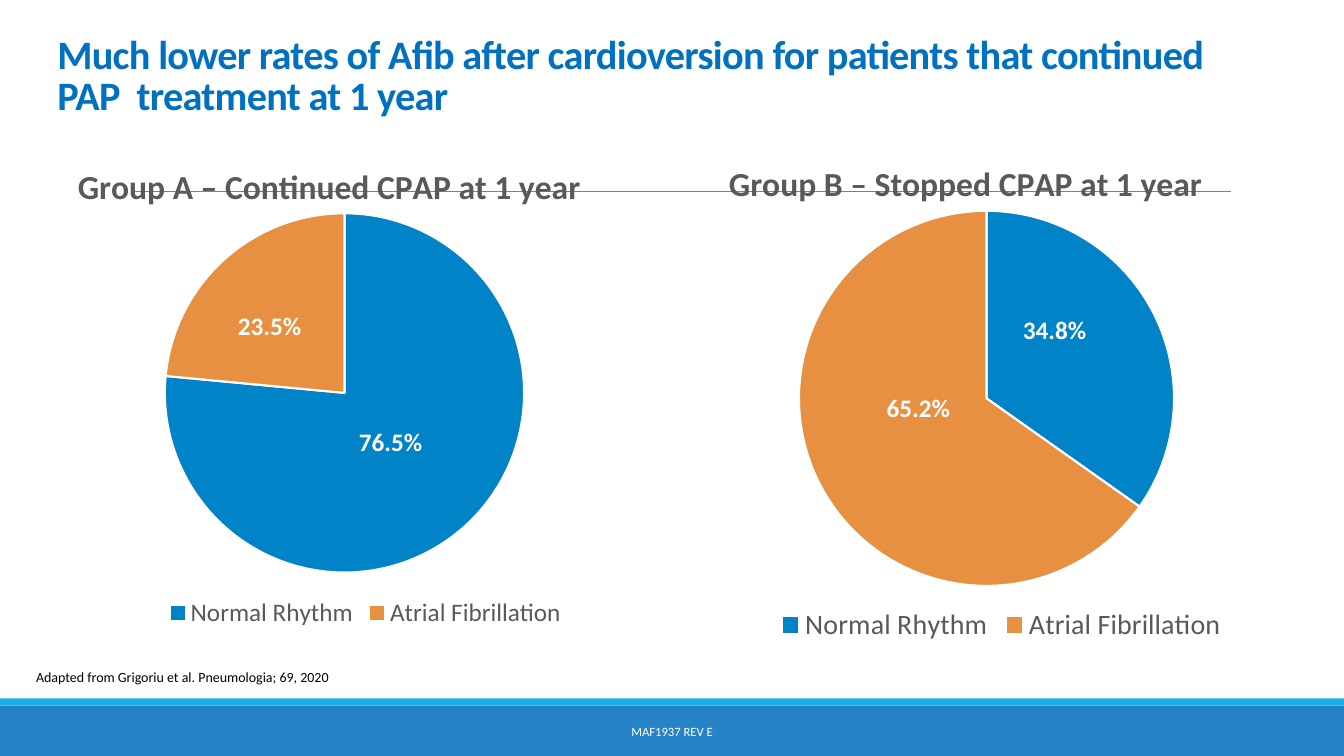
from lxml import etree
from pptx import Presentation
from pptx.chart import data as chart_data
from pptx.dml.color import RGBColor
from pptx.enum import chart as chart_enum, shapes, text
from pptx.oxml import ns
from pptx.util import Cm, Pt

COLORS = {
    "title": "0070C0", "normal": "0083C7", "afib": "E89041", "label": "595959",
    "band": "2683C6", "stripe": "1CADE4", "rule": "808080",
    "white": "FFFFFF", "black": "000000",
}
FONT = "Calibri"
CATEGORIES = ("Normal Rhythm", "Atrial Fibrillation")
GROUPS = (
    {
        "title": "Group A – Continued CPAP at 1 year",
        "values": (76.5, 23.5),
        "box": (-0.28, 3.86, 18.16, 12.12),
        "plot": (0.244, 0.125, 0.499, 0.747),
        "title_at": (0.115, 0.01),
        "legend_at": (0.24, 0.92),
        "legend_size": 18,
        "label_shifts": ((-0.02, -0.035), (-0.02, 0)),
    },
    {
        "title": "Group B – Stopped CPAP at 1 year",
        "values": (34.8, 65.2),
        "box": (15.65, 3.78, 19.15, 12.57),
        "plot": (0.234, 0.122, 0.494, 0.752),
        "title_at": (0.134, 0.01),
        "legend_at": (0.2, 0.92),
        "legend_size": 20,
        "label_shifts": ((-0.02, -0.05), (0.02, -0.065)),
    },
)


def color(name):
    """Return the named colour."""
    return RGBColor.from_string(COLORS[name])


def style_font(font, size, name, bold=False):
    """Format a font with the slide's typeface."""
    font.name, font.size, font.bold = FONT, Pt(size), bold
    font.color.rgb = color(name)


def place(element, index, position, inner=False):
    """Give a chart part a manual layout in fractions of the chart."""
    for old in element.findall(ns.qn("c:layout")):
        element.remove(old)
    layout = etree.Element(ns.qn("c:layout"))
    manual = etree.SubElement(layout, ns.qn("c:manualLayout"))
    settings = []
    if inner:
        settings.append(("layoutTarget", "inner"))
    if element.tag != ns.qn("c:dLbl"):
        settings += [("xMode", "edge"), ("yMode", "edge")]
    settings += zip("xywh", position)
    for tag, value in settings:
        etree.SubElement(manual, ns.qn(f"c:{tag}")).set("val", str(value))
    element.insert(index, layout)


def add_text(page, box, words, size, name, align=text.PP_ALIGN.LEFT):
    """Add a wrapped one-line text box."""
    frame = page.shapes.add_textbox(*map(Cm, box)).text_frame
    frame.word_wrap = True
    frame.vertical_anchor = text.MSO_ANCHOR.MIDDLE
    para = frame.paragraphs[0]
    para.alignment = align
    span = para.add_run()
    span.text = words
    style_font(span.font, size, name)


def add_heading(page, box):
    """Fill the title placeholder and draw the rule below it."""
    title = page.shapes.title
    title.left, title.top, title.width, title.height = map(Cm, box)
    frame = title.text_frame
    frame.word_wrap = True
    frame.auto_size = text.MSO_AUTO_SIZE.NONE
    frame.vertical_anchor = text.MSO_ANCHOR.BOTTOM
    para = frame.paragraphs[0]
    para.alignment = text.PP_ALIGN.LEFT
    para.line_spacing = 0.85
    span = para.add_run()
    span.text = ("Much lower rates of Afib after cardioversion for patients "
                 "that continued PAP  treatment at 1 year")
    style_font(span.font, 28.8, "title", True)
    span.font._element.set("spc", "-50")
    left, top, width, height = box
    level = Cm(top + height + 1.7)
    rule = page.shapes.add_connector(
        shapes.MSO_CONNECTOR.STRAIGHT,
        Cm(left + 2.14), level, Cm(left + width - 0.38), level)
    rule.line.color.rgb = color("rule")
    rule.line.width = Pt(0.5)
    etree.SubElement(rule._element.spPr, ns.qn("a:effectLst"))


def add_pie(page, group):
    """Draw one patient group as a titled pie chart."""
    source = chart_data.CategoryChartData(number_format='0.0"%"')
    source.categories = CATEGORIES
    source.add_series("Series 1", group["values"])
    chart = page.shapes.add_chart(
        chart_enum.XL_CHART_TYPE.PIE, *map(Cm, group["box"]), source).chart
    style_font(chart.font, 10, "black")

    chart.has_title = True
    span = chart.chart_title.text_frame.paragraphs[0].add_run()
    span.text = group["title"]
    style_font(span.font, 24, "label", True)
    chart.chart_title.include_in_layout = False

    chart.has_legend = True
    chart.legend.position = chart_enum.XL_LEGEND_POSITION.BOTTOM
    chart.legend.include_in_layout = False
    style_font(chart.legend.font, group["legend_size"], "label")

    plot = chart.plots[0]
    plot.vary_by_categories = True
    series = plot.series[0]
    for index, name in enumerate(("normal", "afib")):
        point = series.points[index]
        point.format.fill.solid()
        point.format.fill.fore_color.rgb = color(name)
        point.format.line.color.rgb = color("white")
        point.format.line.width = Pt(1.5)
        style_font(point.data_label.font, 18, "white", True)
        point.data_label.position = chart_enum.XL_LABEL_POSITION.CENTER

    root = chart.element
    place(next(root.iter(ns.qn("c:plotArea"))), 0, group["plot"], inner=True)
    place(next(root.iter(ns.qn("c:title"))), 1, group["title_at"])
    place(next(root.iter(ns.qn("c:legend"))), 1, group["legend_at"])
    for label, shift in zip(root.iter(ns.qn("c:dLbl")), group["label_shifts"]):
        place(label, 1, shift)


def add_footer(page, box):
    """Draw the footer bands with the citation above and the code inside."""
    left, top, width, height = box
    stripe = 0.18
    bands = (("band", top + stripe, height - stripe), ("stripe", top, stripe))
    for name, band_top, band_height in bands:
        band = page.shapes.add_shape(
            shapes.MSO_SHAPE.RECTANGLE,
            Cm(left), Cm(band_top), Cm(width), Cm(band_height))
        band.shadow.inherit = False
        band.fill.solid()
        band.fill.fore_color.rgb = color(name)
        band.line.fill.background()
    add_text(page, (left + 0.66, top - 0.89, 27.4, 0.68),
             "Adapted from Grigoriu et al. Pneumologia; 69, 2020", 10, "black")
    add_text(page, (left + 10.24, top + 0.33, width - 20.48, 1.02),
             "MAF1937 REV E", 9, "white", text.PP_ALIGN.CENTER)


def main():
    """Build and save the slide."""
    deck = Presentation()
    deck.slide_width, deck.slide_height = Cm(33.87), Cm(19.05)
    page = deck.slides.add_slide(deck.slide_layouts[5])
    add_heading(page, (1.19, 0.58, 30.2, 2.54))
    for group in GROUPS:
        add_pie(page, group)
    add_footer(page, (0, 17.6, 33.87, 1.45))
    deck.save("out.pptx")


if __name__ == "__main__":
    main()
